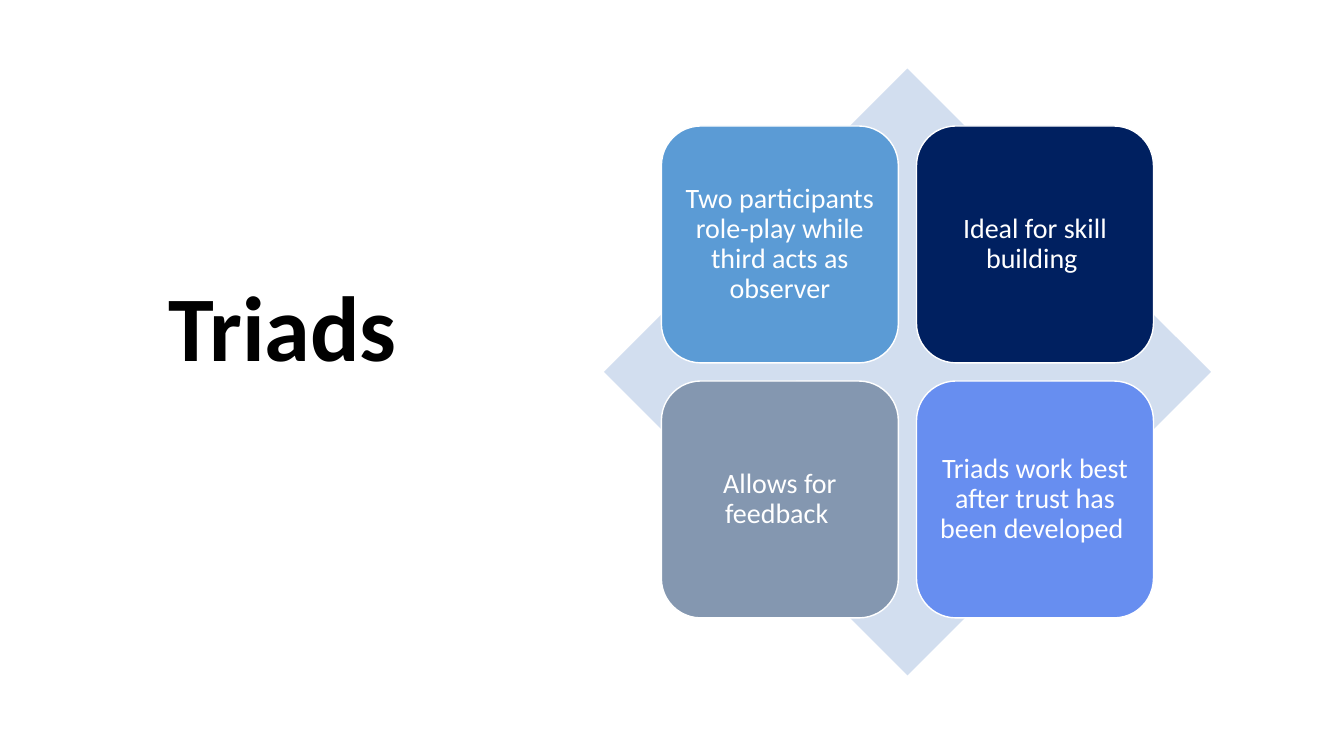
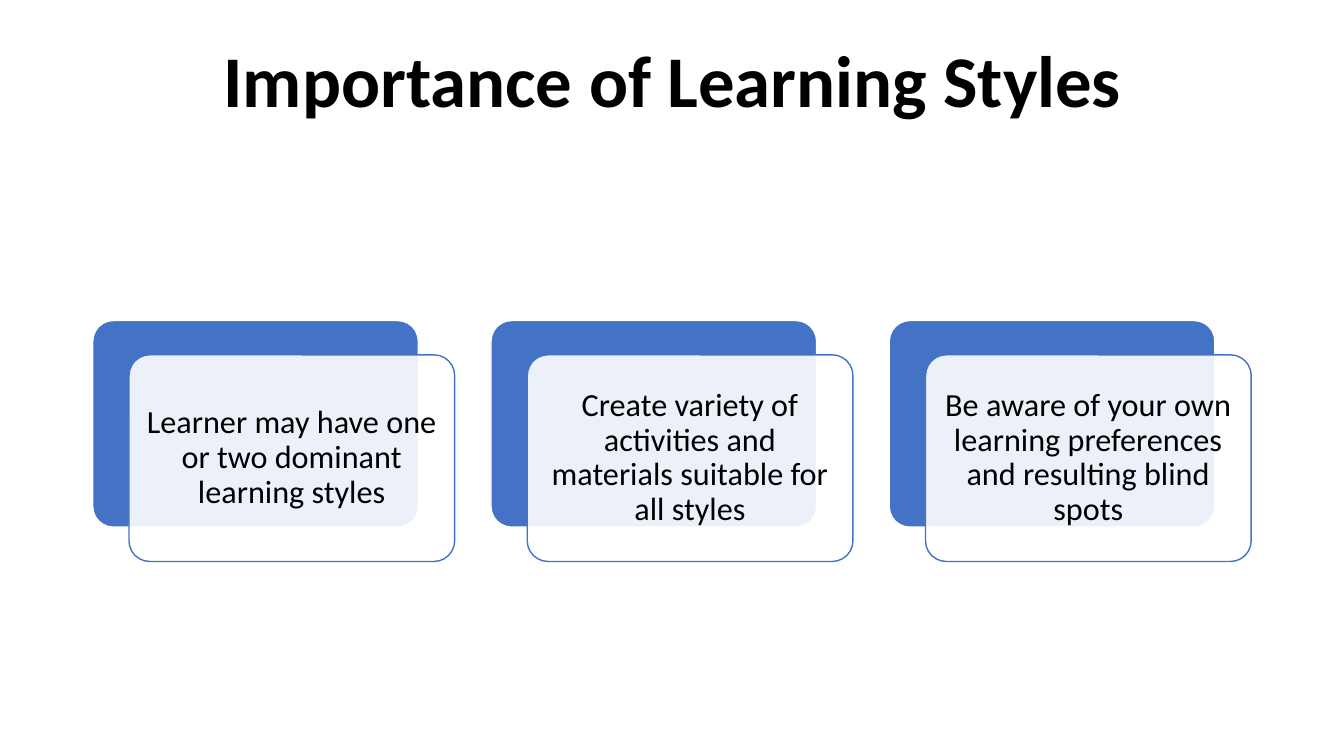
from lxml import etree
from pptx import Presentation
from pptx.dml.color import RGBColor
from pptx.enum import shapes, text
from pptx.oxml import ns
from pptx.util import Inches, Pt

FONT = "Calibri"
BLACK, WHITE = "000000", "FFFFFF"
BLUE, PALE_BLUE = "4472C4", "D2DEEF"

TRIAD_POINTS = [
    ("Two participants role-play while third acts as observer", "5B9BD5"),
    ("Ideal for skill building ", "002060"),
    ("Allows for feedback ", "8497B0"),
    ("Triads work best after trust has been developed ", "678EF0"),
]
STYLE_POINTS = [
    "Learner may have one or two dominant learning styles",
    "Create variety of activities and materials suitable for all styles",
    "Be aware of your own learning preferences and resulting blind spots",
]


def color(hex_value):
    return RGBColor.from_string(hex_value)


def write(frame, content, size, ink, align, bold=False):
    """Fill a text frame with one vertically centred paragraph."""
    frame.word_wrap = True
    frame.auto_size = text.MSO_AUTO_SIZE.NONE
    frame.vertical_anchor = text.MSO_ANCHOR.MIDDLE
    paragraph = frame.paragraphs[0]
    paragraph.alignment = align
    paragraph.line_spacing = 0.9
    run = paragraph.add_run()
    run.text = content
    run.font.name = FONT
    run.font.size = Pt(size)
    run.font.bold = bold
    run.font.color.rgb = color(ink)


def add_titled_slide(prs, heading, box, size, align):
    slide = prs.slides.add_slide(prs.slide_layouts[5])
    title = slide.shapes.title
    title.left, title.top, title.width, title.height = map(Inches, box)
    # The deep bottom margin lifts the heading above the box centre
    title.text_frame.margin_bottom = Inches(0.84)
    write(title.text_frame, heading, size, BLACK, align, bold=True)
    return slide


def add_block(slide, preset, box, fill, line=None, corner=None, alpha=None):
    block = slide.shapes.add_shape(preset, *map(Inches, box))
    block.shadow.inherit = False
    block.fill.solid()
    block.fill.fore_color.rgb = color(fill)
    if alpha is not None:
        fill_color = block.fill._xPr.find(ns.qn("a:solidFill"))[0]
        etree.SubElement(fill_color, ns.qn("a:alpha"), val=str(alpha * 1000))
    if line:
        block.line.color.rgb = color(line)
        block.line.width = Pt(1)
    else:
        block.line.fill.background()
    if corner is not None:
        block.adjustments[0] = corner
    return block


def label(block, content, size, ink, inset):
    frame = block.text_frame
    frame.margin_left = frame.margin_right = Inches(inset)
    frame.margin_top = frame.margin_bottom = Inches(inset)
    write(frame, content, size, ink, text.PP_ALIGN.CENTER)


def build_triads(prs):
    slide = add_titled_slide(prs, "Triads ", (1.57, 0.64, 3.69, 6.09),
                             66, text.PP_ALIGN.LEFT)
    add_block(slide, shapes.MSO_SHAPE.DIAMOND, (5.99, 0.68, 6.02, 6.02), PALE_BLUE)
    # Two-by-two grid over the diamond
    side, pitch = 2.35, 2.53
    for i, (point, fill) in enumerate(TRIAD_POINTS):
        row, column = divmod(i, 2)
        box = (6.56 + column * pitch, 1.25 + row * pitch, side, side)
        tile = add_block(slide, shapes.MSO_SHAPE.ROUNDED_RECTANGLE, box, fill, WHITE)
        label(tile, point, 20, WHITE, 0.08)


def build_learning_styles(prs):
    slide = add_titled_slide(prs, "Importance of Learning Styles",
                             (0.92, 0.61, 11.5, 1.24), 52, text.PP_ALIGN.CENTER)
    # Each card is a translucent panel offset over a solid one
    rounded = shapes.MSO_SHAPE.ROUNDED_RECTANGLE
    width, height, pitch = 3.23, 2.05, 3.95
    for i, point in enumerate(STYLE_POINTS):
        left, top = 0.92 + i * pitch, 3.18
        add_block(slide, rounded, (left, top, width, height), BLUE, WHITE, corner=0.1)
        panel = add_block(slide, rounded, (left + 0.36, top + 0.34, width, height),
                          WHITE, BLUE, corner=0.1, alpha=90)
        label(panel, point, 23, BLACK, 0.1)


def main():
    prs = Presentation()
    prs.slide_width, prs.slide_height = Inches(13.33), Inches(7.5)
    build_triads(prs)
    build_learning_styles(prs)
    prs.save("out.pptx")


if __name__ == "__main__":
    main()
